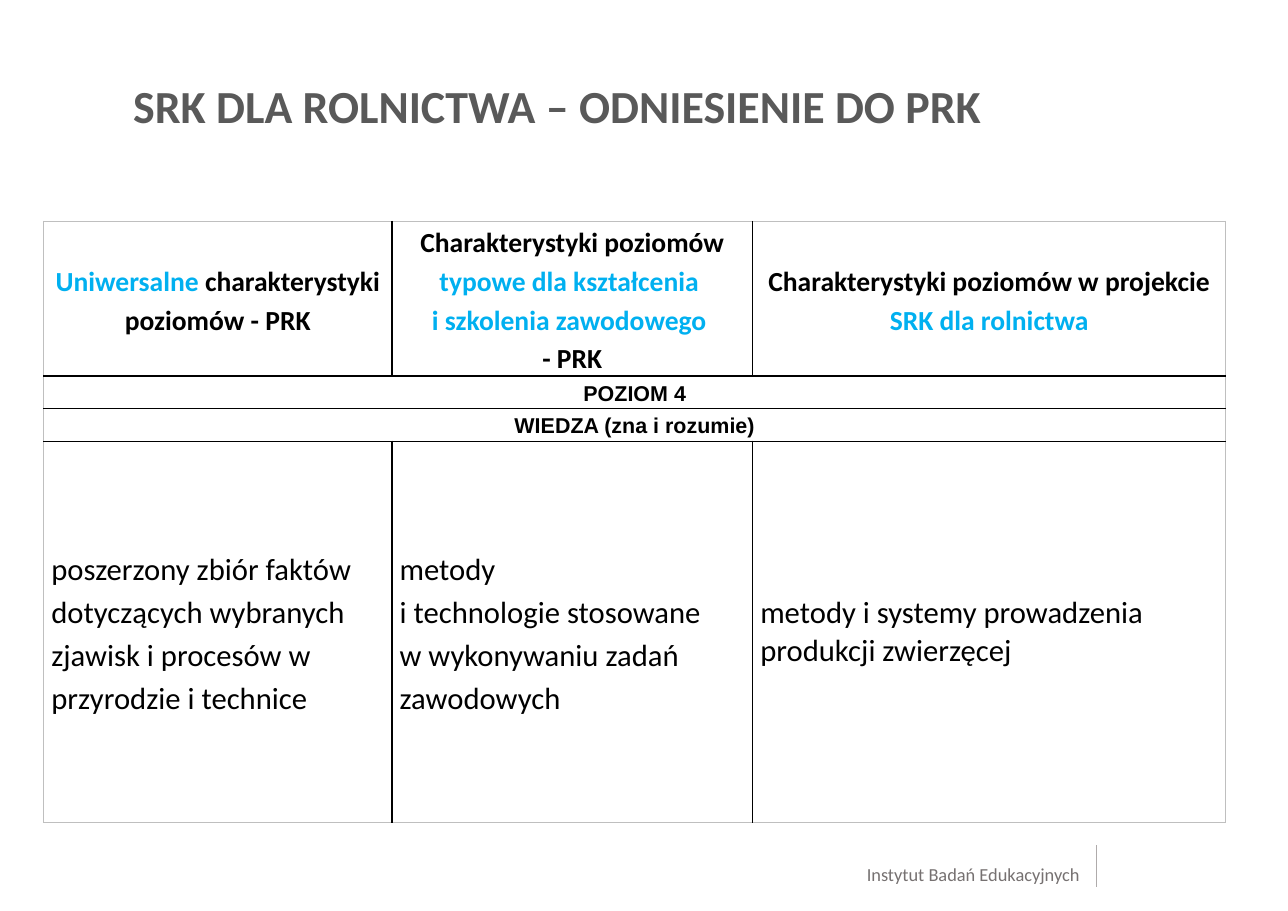
from lxml import etree
from pptx import Presentation
from pptx import util as u
from pptx.dml.color import RGBColor
from pptx.enum import shapes, text
from pptx.oxml import ns

BLACK = RGBColor(0x00, 0x00, 0x00)
BLUE = RGBColor(0x00, 0xB0, 0xF0)
TITLE_GREY = RGBColor(0x59, 0x59, 0x59)
FOOTER_GREY = RGBColor(0x76, 0x71, 0x71)
RULE_GREY = RGBColor(0xAF, 0xAB, 0xAB)
FRAME_GREY = RGBColor(0xBF, 0xBF, 0xBF)

COLUMNS = [227.5, 235.5, 309]
ROWS = [101, 21, 21.5, 249]
HEADERS = [
    [("Uniwersalne", BLUE), (" charakterystyki poziomów - PRK", BLACK)],
    [("Charakterystyki poziomów ", BLACK),
     ("typowe dla kształcenia \ni szkolenia zawodowego \n", BLUE),
     ("- PRK", BLACK)],
    [("Charakterystyki poziomów w projekcie ", BLACK),
     ("SRK dla rolnictwa", BLUE)],
]
BANDS = ["POZIOM 4", "WIEDZA (zna i rozumie)"]
DESCRIPTIONS = [
    ("poszerzony zbiór faktów dotyczących wybranych zjawisk i procesów "
     "w przyrodzie i technice", 1.15),
    ("metody\ni technologie stosowane \nw wykonywaniu zadań zawodowych", 1.15),
    ("metody i systemy prowadzenia produkcji zwierzęcej", 1),
]


def write(tf, runs, font="Calibri", size=18, bold=False, color=BLACK,
          align=text.PP_ALIGN.LEFT, spacing=1.0):
    """Fill the first paragraph; runs is a string or (string, colour) pairs."""
    if isinstance(runs, str):
        runs = [(runs, color)]
    p = tf.paragraphs[0]
    p.alignment, p.line_spacing = align, spacing
    p.font.size = u.Pt(size)
    for content, run_color in runs:
        for i, line in enumerate(content.split("\n")):
            if i:
                p.add_line_break()
            if line:
                r = p.add_run()
                r.text = line
                r.font.name, r.font.size, r.font.bold = font, u.Pt(size), bold
                r.font.color.rgb = run_color


def no_margins(tf):
    tf.margin_left = tf.margin_right = tf.margin_top = tf.margin_bottom = 0


def set_border(cell, side, color, width):
    ln = etree.SubElement(cell._tc.get_or_add_tcPr(), ns.qn(f"a:ln{side}"),
                          w=str(u.Pt(width)))
    fill = etree.SubElement(ln, ns.qn("a:solidFill"))
    etree.SubElement(fill, ns.qn("a:srgbClr"), val=str(color))


def add_title(s, x, y, w, h):
    sp = s.shapes.title
    sp.left, sp.top, sp.width, sp.height = map(u.Pt, (x, y, w, h))
    tf = sp.text_frame
    no_margins(tf)
    tf.word_wrap = True
    tf.auto_size = text.MSO_AUTO_SIZE.NONE
    tf.vertical_anchor = text.MSO_ANCHOR.TOP
    write(tf, "SRK DLA ROLNICTWA – ODNIESIENIE DO PRK", size=30, bold=True,
          color=TITLE_GREY, spacing=0.9)


def format_cells(table):
    last_row, last_col = len(ROWS) - 1, len(COLUMNS) - 1
    for i in range(len(ROWS)):
        for j in range(len(COLUMNS)):
            cell = table.cell(i, j)
            cell.margin_left = cell.margin_right = u.Pt(5)
            cell.margin_top = cell.margin_bottom = 0
            cell.vertical_anchor = text.MSO_ANCHOR.MIDDLE
            whole_row = cell.is_merge_origin or cell.is_spanned
            edges = {"L": j == 0 or whole_row, "R": j == last_col or whole_row,
                     "T": i == 0, "B": i == last_row}
            for side, outer in edges.items():
                set_border(cell, side, FRAME_GREY if outer else BLACK,
                           0.75 if outer else 1)
            cell.fill.background()


def add_comparison(s, x, y):
    table = s.shapes.add_table(
        len(ROWS), len(COLUMNS), u.Pt(x), u.Pt(y),
        u.Pt(sum(COLUMNS)), u.Pt(sum(ROWS))).table
    table.first_row = table.horz_banding = False
    for column, width in zip(table.columns, COLUMNS):
        column.width = u.Pt(width)
    for row, height in zip(table.rows, ROWS):
        row.height = u.Pt(height)

    # Full-width bands
    for i, band in enumerate(BANDS, 1):
        table.cell(i, 0).merge(table.cell(i, len(COLUMNS) - 1))
        write(table.cell(i, 0).text_frame, band, font="Arial", size=14,
              bold=True, align=text.PP_ALIGN.CENTER, spacing=1.15)
    format_cells(table)

    # Column heads and descriptions
    for j, (header, (description, spacing)) in enumerate(
            zip(HEADERS, DESCRIPTIONS)):
        write(table.cell(0, j).text_frame, header, bold=True,
              align=text.PP_ALIGN.CENTER, spacing=1.15)
        write(table.cell(len(ROWS) - 1, j).text_frame, description, size=20,
              spacing=spacing)


def add_footer(s, x, y, w, h):
    # Institute name
    sp = s.shapes.add_textbox(u.Pt(x), u.Pt(y + h - 27), u.Pt(w - 10), u.Pt(15))
    no_margins(sp.text_frame)
    sp.text_frame.word_wrap = False
    sp.text_frame.vertical_anchor = text.MSO_ANCHOR.MIDDLE
    sp.top = u.Pt(y + h - 16)
    write(sp.text_frame, "Instytut Badań Edukacyjnych", size=12,
          color=FOOTER_GREY)
    # Vertical rule at the right edge
    rule = s.shapes.add_connector(shapes.MSO_CONNECTOR.STRAIGHT, u.Pt(x + w),
                                  u.Pt(y + h), u.Pt(x + w), u.Pt(y))
    rule.line.color.rgb = RULE_GREY
    rule.line.width = u.Pt(0.5)
    etree.SubElement(rule._element.spPr, ns.qn("a:effectLst"))


def main():
    prs = Presentation()
    prs.slide_width, prs.slide_height = u.Pt(841), u.Pt(594.75)
    s = prs.slides.add_slide(prs.slide_layouts[5])
    add_title(s, 87, 54.75, 725, 61)
    add_comparison(s, 28.5, 144.5)
    add_footer(s, 566, 551.5, 149.75, 27.5)
    prs.save("out.pptx")


if __name__ == "__main__":
    main()
